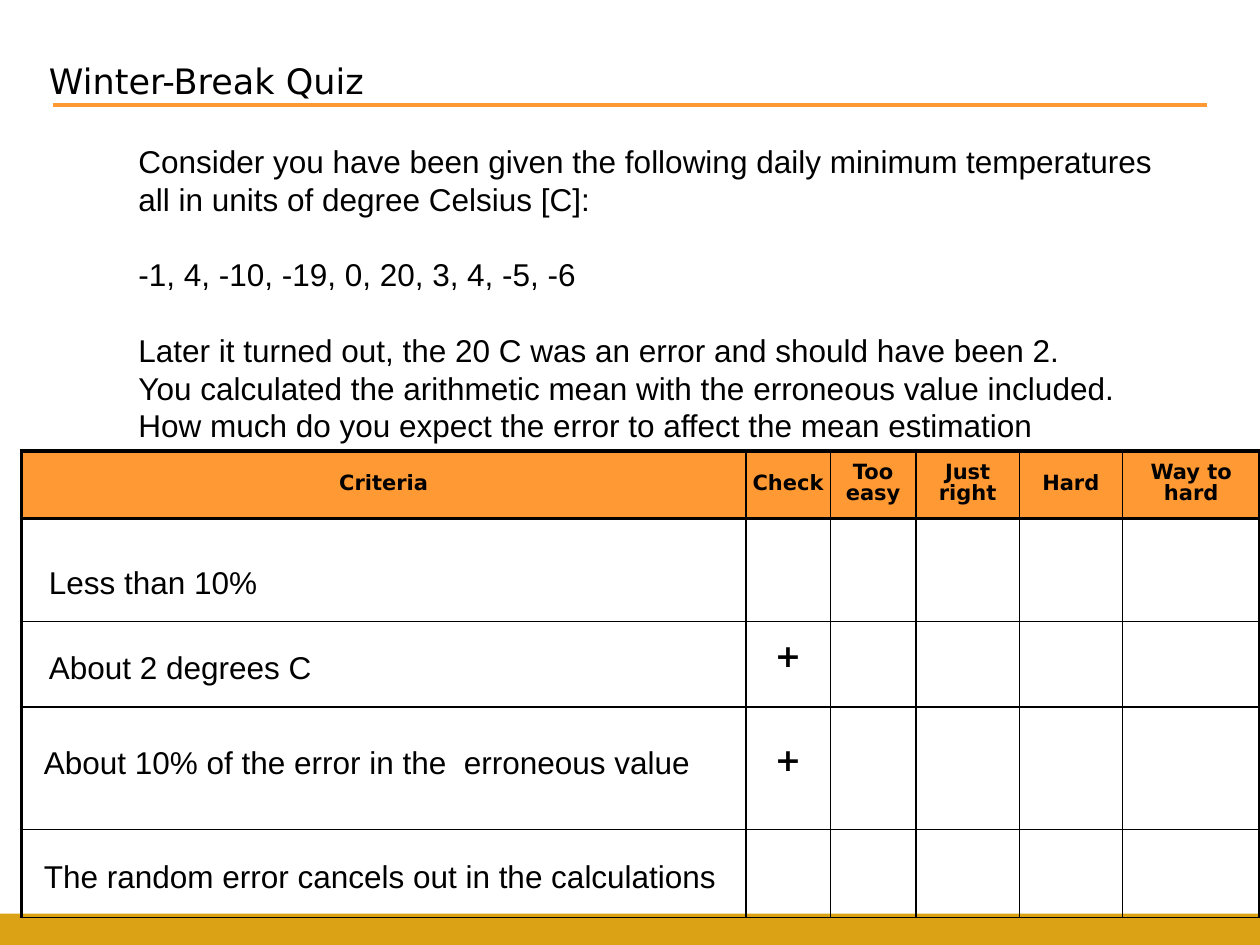
from lxml.etree import SubElement
from pptx import Presentation
from pptx.dml.color import RGBColor
from pptx.enum.shapes import MSO_CONNECTOR, MSO_SHAPE
from pptx.enum.text import MSO_ANCHOR, MSO_AUTO_SIZE, PP_ALIGN
from pptx.oxml.ns import qn
from pptx.util import Inches, Pt

BLACK, ORANGE, GOLD = "000000", "FF9933", "DBA215"
TITLE = "Winter-Break Quiz"
QUESTION = [
    ("Consider you have been given the following daily minimum temperatures", 0),
    ("all in units of degree Celsius [C]:", 0),
    ("-1, 4, -10, -19, 0, 20, 3, 4, -5, -6", 21.5),
    ("Later it turned out, the 20 C was an error and should have been 2.", 21.5),
    ("You calculated the arithmetic mean with the erroneous value included.", 0),
    ("How much do you expect the error to affect the mean estimation", 0),
]
ANSWERS = [
    ("Less than 10%", 0.29, 4.42, 1.87),
    ("About 2 degrees C", 0.29, 5.09, 2.31),
    ("About 10% of the error in the  erroneous value", 0.25, 5.85, 5.38),
    ("The random error cancels out in the calculations", 0.25, 6.75, 5.59),
]
HEADERS = ["Criteria", "Check", "Too easy", "Just right", "Hard", "Way to hard"]
CHECKS = ["", "", "+", "+", ""]
COLUMN_WIDTHS = [5.75, 0.67, 0.68, 0.82, 0.82, 1.09]
ROW_HEIGHTS = [0.53, 0.82, 0.68, 0.97, 0.7]


def color(value):
    return RGBColor.from_string(value)


def format_paragraph(paragraph, size, font_name, bold=False):
    for run in paragraph.runs:
        run.font.size = Pt(size)
        run.font.name = font_name
        run.font.bold = bold
        run.font.color.rgb = color(BLACK)


def add_text(slide, lines, box, size=18, font_name="Arial"):
    shape = slide.shapes.add_textbox(*map(Inches, box))
    text_frame = shape.text_frame
    text_frame.word_wrap = False
    text_frame.auto_size = MSO_AUTO_SIZE.SHAPE_TO_FIT_TEXT
    text_frame.text = "\n".join(text for text, gap in lines)
    for paragraph, (text, gap) in zip(text_frame.paragraphs, lines):
        paragraph.space_before = Pt(gap)
        format_paragraph(paragraph, size, font_name)


def set_borders(cell, widths):
    properties = cell._tc.get_or_add_tcPr()
    for position, (side, width) in enumerate(widths.items()):
        line = properties.makeelement(qn(f"a:ln{side}"), {"w": str(Pt(width))})
        fill = SubElement(line, qn("a:solidFill"))
        SubElement(fill, qn("a:srgbClr"), val=BLACK)
        properties.insert(position, line)


def add_criteria_table(slide):
    row_count, column_count = len(ROW_HEIGHTS), len(COLUMN_WIDTHS)
    frame = slide.shapes.add_table(
        row_count, column_count, Inches(0.17), Inches(3.58),
        Inches(sum(COLUMN_WIDTHS)), Inches(sum(ROW_HEIGHTS)))
    table = frame.table
    for column, width in zip(table.columns, COLUMN_WIDTHS):
        column.width = Inches(width)
    for row, height in zip(table.rows, ROW_HEIGHTS):
        row.height = Inches(height)
    for row in range(row_count):
        for column in range(column_count):
            cell = table.cell(row, column)
            is_header = row == 0
            if is_header:
                cell.text = HEADERS[column]
                cell.fill.solid()
                cell.fill.fore_color.rgb = color(ORANGE)
            else:
                cell.text = CHECKS[row] if column == 1 else ""
                cell.fill.background()
            cell.vertical_anchor = MSO_ANCHOR.MIDDLE
            cell.margin_left = cell.margin_right = Inches(0.05)
            cell.margin_top = cell.margin_bottom = Inches(0.1)
            paragraph = cell.text_frame.paragraphs[0]
            paragraph.alignment = PP_ALIGN.CENTER
            paragraph.line_spacing = Pt(12)
            format_paragraph(paragraph, 12 if is_header else 18, "DejaVu Sans", True)
            set_borders(cell, {
                "L": 2.25 if column == 0 else 1,
                "R": 2.25 if column == column_count - 1 else 1,
                "T": 2.25 if row <= 1 else 1,
                "B": 2.25 if is_header else 1,
            })


def main():
    presentation = Presentation()
    presentation.slide_width = Inches(10)
    presentation.slide_height = Inches(7.5)
    slide = presentation.slides.add_slide(presentation.slide_layouts[6])

    footer = slide.shapes.add_shape(
        MSO_SHAPE.RECTANGLE, 0, Inches(7.25), Inches(10), Inches(0.25))
    footer.shadow.inherit = False
    footer.fill.solid()
    footer.fill.fore_color.rgb = color(GOLD)
    footer.line.fill.background()

    add_text(slide, [(TITLE, 0)], (0.29, 0.42, 2.79, 0.44), 20, "DejaVu Sans")
    rule = slide.shapes.add_connector(
        MSO_CONNECTOR.STRAIGHT, Inches(0.42), Inches(0.83), Inches(9.58), Inches(0.83))
    rule.line.color.rgb = color(ORANGE)
    rule.line.width = Pt(2.25)
    SubElement(rule._element.spPr, qn("a:effectLst"))

    add_criteria_table(slide)
    add_text(slide, QUESTION, (1, 1.08, 8.32, 2.52))
    for text, left, top, width in ANSWERS:
        add_text(slide, [(text, 0)], (left, top, width, 0.4))
    presentation.save("out.pptx")


if __name__ == "__main__":
    main()
